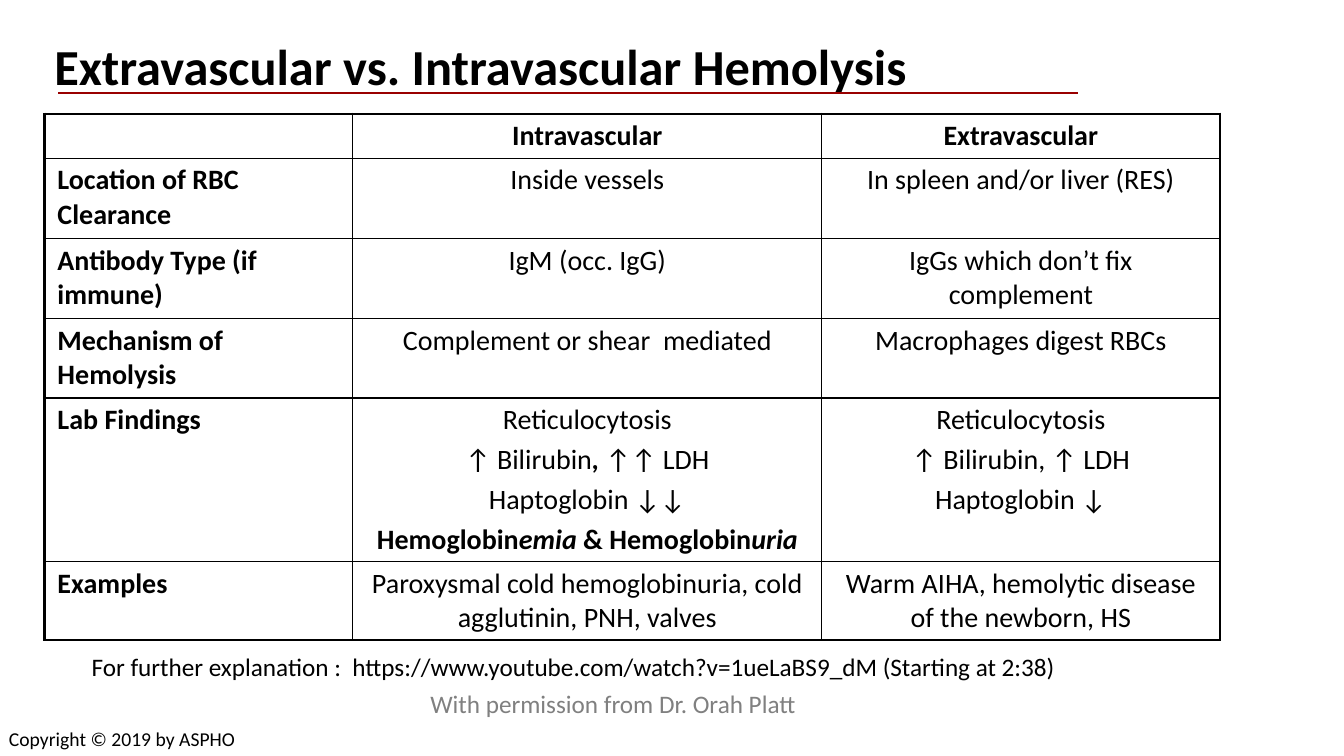
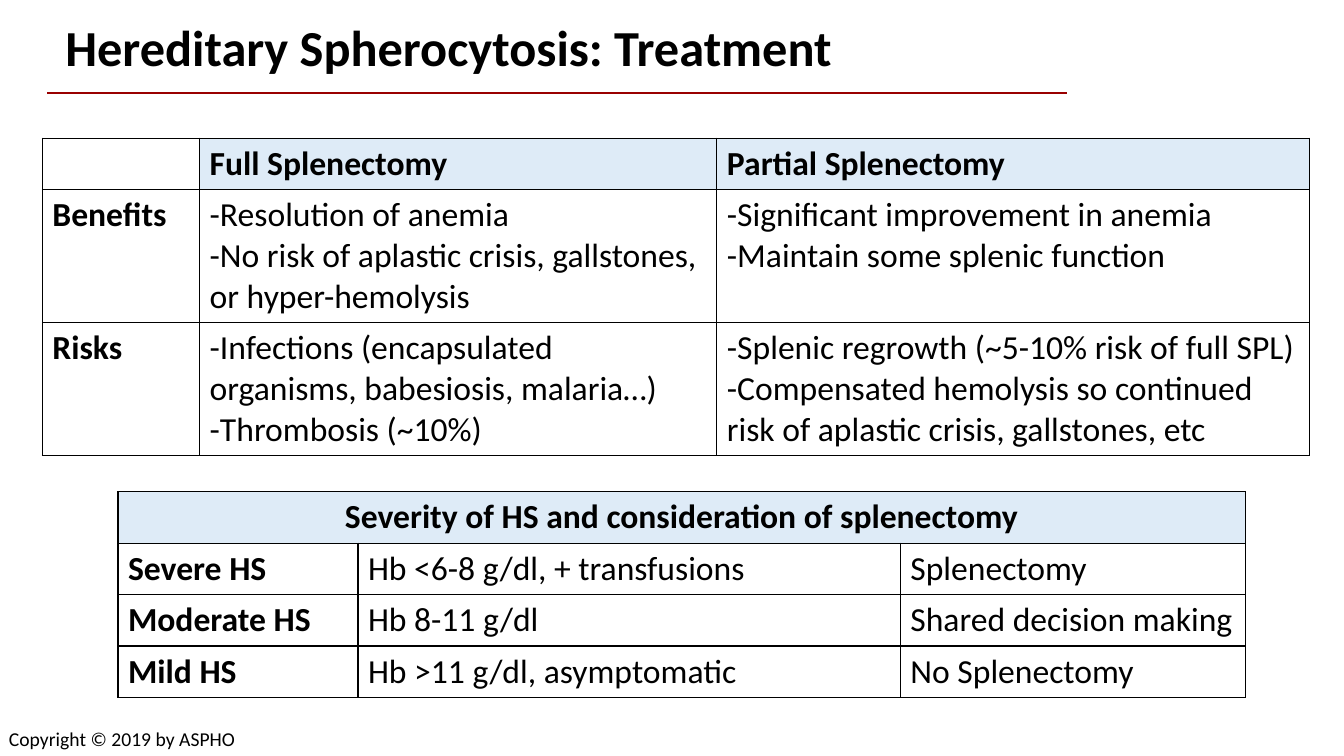
from lxml import etree
from pptx import Presentation
from pptx.dml.color import RGBColor
from pptx.enum.shapes import MSO_CONNECTOR
from pptx.enum.text import MSO_ANCHOR, PP_ALIGN
from pptx.oxml.ns import qn
from pptx.util import Emu, Pt

LEFT, CENTER = PP_ALIGN.LEFT, PP_ALIGN.CENTER
TOP, MIDDLE = MSO_ANCHOR.TOP, MSO_ANCHOR.MIDDLE
STRAIGHT = MSO_CONNECTOR.STRAIGHT

FONT = "Calibri"
BLACK, GREY, RED, PALE_BLUE = "000000", "808080", "990000", "DEEBF7"
COPYRIGHT = ("Copyright © 2019 by ASPHO", (-1, 716, 248, 34), 14, BLACK)


def px(length):
    """Turn px, at 100 to the inch, into EMU."""
    return Emu(length * 9144)


def write(frame, text, size=18, color=BLACK, bold=False, align=LEFT,
          anchor=TOP, gap=0, spacing=1.0):
    """Fill a frame; text is a list of paragraphs, or a string split at line ends.

    A paragraph is a string or a list of (text, bold, italic) spans.
    """
    frame.word_wrap = True
    frame.vertical_anchor = anchor
    paragraphs = text.split("\n") if isinstance(text, str) else text
    for index, content in enumerate(paragraphs):
        para = frame.add_paragraph() if index else frame.paragraphs[0]
        para.alignment = align
        para.line_spacing = spacing
        para.space_before = Pt(gap if index else 0)
        spans = [(content, bold, False)] if isinstance(content, str) else content
        for words, is_bold, is_italic in spans:
            span = para.add_run()
            span.text = words
            span.font.name = FONT
            span.font.size = Pt(size)
            span.font.bold = is_bold
            span.font.italic = is_italic
            span.font.color.rgb = RGBColor.from_string(color)


# A row with a single entry spans the whole table.
hemolysis_table = dict(
    at=(44, 113), columns=(306, 465, 395), heights=(44, 80, 79, 79, 162, 78),
    size=20, align=CENTER, gap=4, margin=13, outline=2.25, header_fill=None,
    rows=[
        ["", "Intravascular", "Extravascular"],
        ["Location of RBC Clearance", "Inside vessels", "In spleen and/or liver (RES)"],
        ["Antibody Type (if immune)", "IgM (occ. IgG)", "IgGs which don’t fix complement"],
        ["Mechanism of Hemolysis", "Complement or shear  mediated", "Macrophages digest RBCs"],
        ["Lab Findings",
         ["Reticulocytosis",
          [("↑ Bilirubin", False, False), (", ", True, True), ("↑↑ LDH", False, False)],
          "Haptoglobin ↓↓",
          [("Hemoglobin", True, False), ("emia", True, True),
           (" & Hemoglobin", True, False), ("uria", True, True)]],
         "Reticulocytosis\n↑ Bilirubin, ↑ LDH\nHaptoglobin ↓"],
        ["Examples", "Paroxysmal cold hemoglobinuria, cold agglutinin, PNH, valves",
         "Warm AIHA, hemolytic disease of the newborn, HS"],
    ])
splenectomy_style = dict(size=24, align=LEFT, gap=0, margin=10, outline=1,
                         header_fill=PALE_BLUE)
severity_table = dict(
    splenectomy_style, at=(117, 488), columns=(238, 538, 342), heights=(51,) * 4,
    rows=[
        ["Severity of HS and consideration of splenectomy"],
        ["Severe HS", "Hb <6-8 g/dl, + transfusions", "Splenectomy"],
        ["Moderate HS", "Hb 8-11 g/dl", "Shared decision making"],
        ["Mild HS", "Hb >11 g/dl, asymptomatic", "No Splenectomy"],
    ])
treatment_table = dict(
    splenectomy_style, at=(42, 137), columns=(156, 513, 588), heights=(51, 132, 132),
    rows=[
        ["", "Full Splenectomy", "Partial Splenectomy"],
        ["Benefits",
         "-Resolution of anemia\n"
         "-No risk of aplastic crisis, gallstones, or hyper-hemolysis",
         "-Significant improvement in anemia\n-Maintain some splenic function"],
        ["Risks",
         "-Infections (encapsulated organisms, babesiosis, malaria…)\n-Thrombosis (~10%)",
         "-Splenic regrowth (~5-10% risk of full SPL)\n"
         "-Compensated hemolysis so continued risk of aplastic crisis, gallstones, etc"],
    ])

pages = [
    dict(title="Extravascular vs. Intravascular Hemolysis", title_at=(44, 35, 1211, 67),
         rule_left=58, tables=[hemolysis_table],
         notes=[("For further explanation :  https://www.youtube.com/watch?v=1ueLaBS9_dM"
                 " (Starting at 2:38)", (81, 641, 984, 40), 18, BLACK),
                ("With permission from Dr. Orah Platt", (417, 678, 400, 40), 18, GREY)]),
    dict(title="Hereditary Spherocytosis: Treatment", title_at=(55, 21, 1200, 58),
         rule_left=47, tables=[severity_table, treatment_table], notes=[]),
]

deck = Presentation()
deck.slide_width, deck.slide_height = px(1333), px(750)

for content in pages:
    page = deck.slides.add_slide(deck.slide_layouts[6])

    title_box = page.shapes.add_textbox(*map(px, content["title_at"]))
    write(title_box.text_frame, content["title"], size=36, bold=True,
          anchor=MIDDLE, spacing=0.9)

    for design in content["tables"]:
        rows, columns, heights = design["rows"], design["columns"], design["heights"]
        table = page.shapes.add_table(
            len(rows), len(columns), *map(px, design["at"]),
            px(sum(columns)), px(sum(heights))).table
        table.first_row = table.horz_banding = False
        for column, width in zip(table.columns, columns):
            column.width = px(width)

        last_row, last_column = len(rows) - 1, len(columns) - 1
        for r, entries in enumerate(rows):
            table.rows[r].height = px(heights[r])
            spanning = len(entries) == 1
            if spanning:
                table.cell(r, 0).merge(table.cell(r, last_column))
            for c in range(len(columns)):
                cell = table.cell(r, c)
                entry = entries[c] if c < len(entries) else ""
                cell.margin_left = cell.margin_right = px(design["margin"])
                cell.margin_top = cell.margin_bottom = px(5)
                if entry:
                    write(cell.text_frame, entry, size=design["size"], gap=design["gap"],
                          bold=r == 0 or c == 0,
                          align=CENTER if spanning else design["align"] if c else LEFT)

                if r == 0 and entry and design["header_fill"]:
                    cell.fill.solid()
                    cell.fill.fore_color.rgb = RGBColor.from_string(design["header_fill"])
                else:
                    cell.fill.background()

                properties = cell._tc.get_or_add_tcPr()
                sides = [("a:lnL", c == 0), ("a:lnR", c == last_column),
                         ("a:lnT", r == 0), ("a:lnB", r == last_row)]
                for position, (side, is_outer) in enumerate(sides):
                    weight = Pt(design["outline"] if is_outer else 1)
                    border = etree.Element(qn(side), w=str(weight))
                    paint = etree.SubElement(border, qn("a:solidFill"))
                    etree.SubElement(paint, qn("a:srgbClr"), val=BLACK)
                    properties.insert(position, border)

    rule_left = content["rule_left"]
    rule = page.shapes.add_connector(STRAIGHT, px(rule_left), px(92),
                                     px(rule_left + 1011), px(92))
    rule.line.color.rgb = RGBColor.from_string(RED)
    rule.line.width = Pt(1.5)
    etree.SubElement(rule._element.spPr, qn("a:effectLst"))

    for text, place, size, color in content["notes"] + [COPYRIGHT]:
        note_box = page.shapes.add_textbox(*map(px, place))
        write(note_box.text_frame, text, size=size, color=color)

deck.save("out.pptx")
